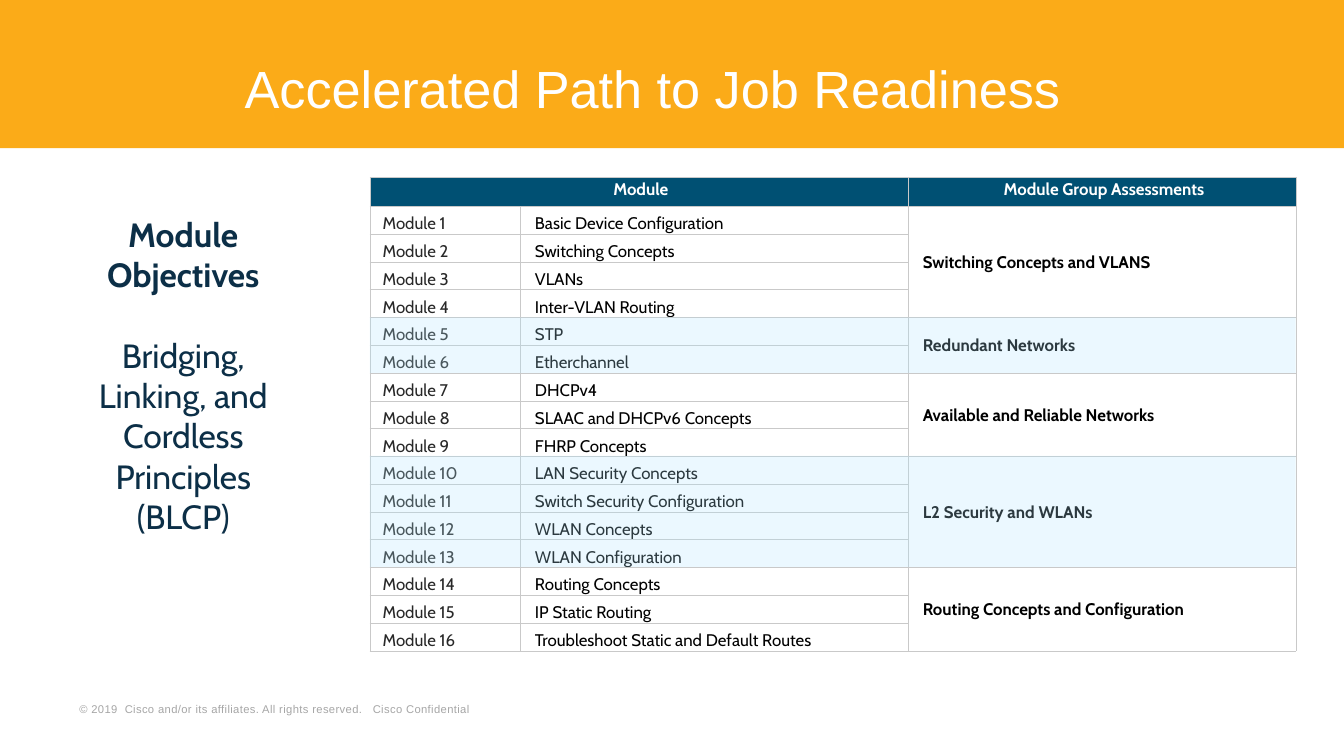
"""Build the slide that lists the course modules and their group assessments."""
from pptx import Presentation
from pptx.dml.color import RGBColor
from pptx.enum.shapes import MSO_SHAPE
from pptx.enum.text import MSO_ANCHOR, MSO_AUTO_SIZE, PP_ALIGN
from pptx.oxml import parse_xml
from pptx.oxml.ns import nsdecls
from pptx.util import Cm, Pt

RECT = MSO_SHAPE.RECTANGLE
TOP, MIDDLE, BOTTOM = MSO_ANCHOR.TOP, MSO_ANCHOR.MIDDLE, MSO_ANCHOR.BOTTOM
LEFT, CENTER = PP_ALIGN.LEFT, PP_ALIGN.CENTER
NO_FIT = MSO_AUTO_SIZE.NONE

WHITE = RGBColor(0xFF, 0xFF, 0xFF)
BLACK = RGBColor(0, 0, 0)
CHARCOAL = RGBColor(0x28, 0x28, 0x28)
GRAY = RGBColor(0xA6, 0xA6, 0xA6)
BORDER = RGBColor(0xC9, 0xC9, 0xC9)
NAVY = RGBColor(0x0C, 0x2F, 0x47)
TEAL = RGBColor(0x00, 0x50, 0x73)
SKY = RGBColor(0xB0, 0xE7, 0xFF)
AMBER = RGBColor(0xFB, 0xAB, 0x18)

GROUPS = [
    ("Switching Concepts and VLANS",
     ["Basic Device Configuration", "Switching Concepts", "VLANs", "Inter-VLAN Routing"]),
    ("Redundant Networks", ["STP", "Etherchannel"]),
    ("Available and Reliable Networks",
     ["DHCPv4", "SLAAC and DHCPv6 Concepts", "FHRP Concepts"]),
    ("L2 Security and WLANs",
     ["LAN Security Concepts", "Switch Security Configuration",
      "WLAN Concepts", "WLAN Configuration"]),
    ("Routing Concepts and Configuration",
     ["Routing Concepts", "IP Static Routing", "Troubleshoot Static and Default Routes"]),
]
N_MODULES = sum(len(topics) for _, topics in GROUPS)

TABLE_X, TABLE_Y, TABLE_H = Cm(6.99), Cm(3.35), Cm(8.94)
COL_WIDTHS = [Cm(2.84), Cm(7.33), Cm(7.33)]
HEADER_H = Cm(0.55)
ROW_H = (TABLE_H - HEADER_H) // N_MODULES

HEADER = {"size": Pt(9), "name": "Cabin", "bold": True, "color": WHITE}
NUMBER = {**HEADER, "bold": False, "color": CHARCOAL}
TOPIC = {**NUMBER, "color": BLACK}
ASSESSMENT = {**TOPIC, "bold": True}
TITLE = {"size": Pt(28), "name": "Arial", "bold": False, "color": WHITE}
OBJECTIVE = {"size": Pt(18), "name": "Cabin", "bold": True, "color": NAVY}
COURSE = {**OBJECTIVE, "bold": False}
FOOTER = {"size": Pt(6), "name": "Arial", "bold": False, "color": GRAY}


def set_attrs(obj, values):
    """Set each attribute of an object from a dict."""
    for name, value in values.items():
        setattr(obj, name, value)


def write(p, text, font, **layout):
    """Write one formatted run into a paragraph."""
    set_attrs(p, layout)
    r = p.add_run()
    r.text = text
    for name, value in font.items():
        if name == "color":
            r.font.color.rgb = value
        else:
            setattr(r.font, name, value)
    return r


def add_rect(s, x, y, w, h, color, alpha=None):
    """Add a borderless rectangle, see-through if alpha is given in percent."""
    sp = s.shapes.add_shape(RECT, x, y, w, h)
    sp.shadow.inherit = False
    sp.line.fill.background()
    sp.fill.solid()
    sp.fill.fore_color.rgb = color
    if alpha:
        clr = sp._element.spPr.find(".//{*}srgbClr")
        clr.append(parse_xml(f'<a:alpha {nsdecls("a")} val="{alpha * 1000}"/>'))
    return sp


def add_text(s, x, y, w, h, anchor):
    """Add a wrapping text box and return its text frame."""
    tf = s.shapes.add_textbox(x, y, w, h).text_frame
    set_attrs(tf, {"word_wrap": True, "vertical_anchor": anchor})
    return tf


def style_cell(cell, fill):
    """Give a cell thin borders and a solid fill."""
    tcPr = cell._tc.get_or_add_tcPr()
    for side in "LRTB":
        tcPr.append(parse_xml(
            f'<a:ln{side} {nsdecls("a")} w="{Pt(0.25)}"><a:solidFill>'
            f'<a:srgbClr val="{BORDER}"/></a:solidFill></a:ln{side}>'))
    cell.fill.solid()
    cell.fill.fore_color.rgb = fill


def fill_cell(cell, text, font, anchor=MIDDLE, left=Cm(0.28), top=Cm(0.03), **layout):
    """Write text into a cell with its margins and anchor."""
    set_attrs(cell, {"margin_left": left, "margin_right": Cm(0.03), "margin_top": top,
                     "margin_bottom": 0, "vertical_anchor": anchor})
    write(cell.text_frame.paragraphs[0], text, font, **layout)


def add_modules(s):
    """Add the module table and tint every second group."""
    width = sum(COL_WIDTHS)
    table = s.shapes.add_table(N_MODULES + 1, 3, TABLE_X, TABLE_Y, width, TABLE_H).table
    set_attrs(table, {"first_row": False, "horz_banding": False})
    for col, w in zip(table.columns, COL_WIDTHS):
        col.width = w
    for i, row in enumerate(table.rows):
        row.height = ROW_H if i else HEADER_H
        for cell in row.cells:
            style_cell(cell, WHITE if i else TEAL)

    table.cell(0, 0).merge(table.cell(0, 1))
    for col, text in ((0, "Module"), (2, "Module Group Assessments")):
        fill_cell(table.cell(0, col), text, HEADER, left=Cm(0.1), top=0,
                  alignment=CENTER, line_spacing=Pt(8))

    first = 1
    for g, (assessment, topics) in enumerate(GROUPS):
        for n, topic in enumerate(topics, first):
            fill_cell(table.cell(n, 0), f"Module {n}", NUMBER, left=Cm(0.24),
                      line_spacing=Pt(14))
            fill_cell(table.cell(n, 1), topic, TOPIC, BOTTOM)
        table.cell(first, 2).merge(table.cell(n, 2))
        fill_cell(table.cell(first, 2), assessment, ASSESSMENT)
        if g % 2:
            y = TABLE_Y + HEADER_H + (first - 1) * ROW_H
            add_rect(s, TABLE_X, y, width, len(topics) * ROW_H, SKY, 25)
        first = n + 1


def add_title(s, width):
    """Add the banner and place the title over it."""
    banner = add_rect(s, 0, 0, width, Cm(2.8), AMBER)
    s.shapes._spTree.insert(2, banner._element)
    sp = s.shapes.title
    set_attrs(sp, {"left": Cm(4.37), "top": Cm(0.89), "width": Cm(20.14), "height": Cm(1.75)})
    set_attrs(sp.text_frame, {"vertical_anchor": MIDDLE, "auto_size": NO_FIT})
    write(sp.text_frame.paragraphs[0], "Accelerated Path to Job Readiness", TITLE,
          alignment=LEFT, line_spacing=0.8)


def add_objectives(s):
    """Add the heading and course name beside the table."""
    tf = add_text(s, Cm(1.32), Cm(3.91), Cm(4.29), Cm(6.4), TOP)
    write(tf.paragraphs[0], "Module", OBJECTIVE, alignment=CENTER)
    write(tf.add_paragraph(), "Objectives", OBJECTIVE, alignment=CENTER)
    write(tf.add_paragraph(), "Bridging, Linking, and Cordless Principles (BLCP)",
          COURSE, alignment=CENTER, space_before=Pt(21.7))


def add_footer(s):
    """Add the copyright line."""
    tf = add_text(s, Cm(1.32), Cm(13.18), Cm(9.45), Cm(0.43), BOTTOM)
    set_attrs(tf, {"margin_left": Cm(0.18), "margin_right": Cm(0.18),
                   "margin_top": Cm(0.08), "margin_bottom": Cm(0.08)})
    r = write(tf.paragraphs[0],
              "© 2019  Cisco and/or its affiliates. All rights reserved.   Cisco Confidential",
              FOOTER)
    r.font._element.set("spc", "20")


def main():
    """Build and save the slide."""
    prs = Presentation()
    set_attrs(prs, {"slide_width": Cm(25.4), "slide_height": Cm(14.29)})
    s = prs.slides.add_slide(prs.slide_layouts[5])
    add_footer(s)
    add_modules(s)
    add_title(s, prs.slide_width)
    add_objectives(s)
    prs.save("out.pptx")


if __name__ == "__main__":
    main()
